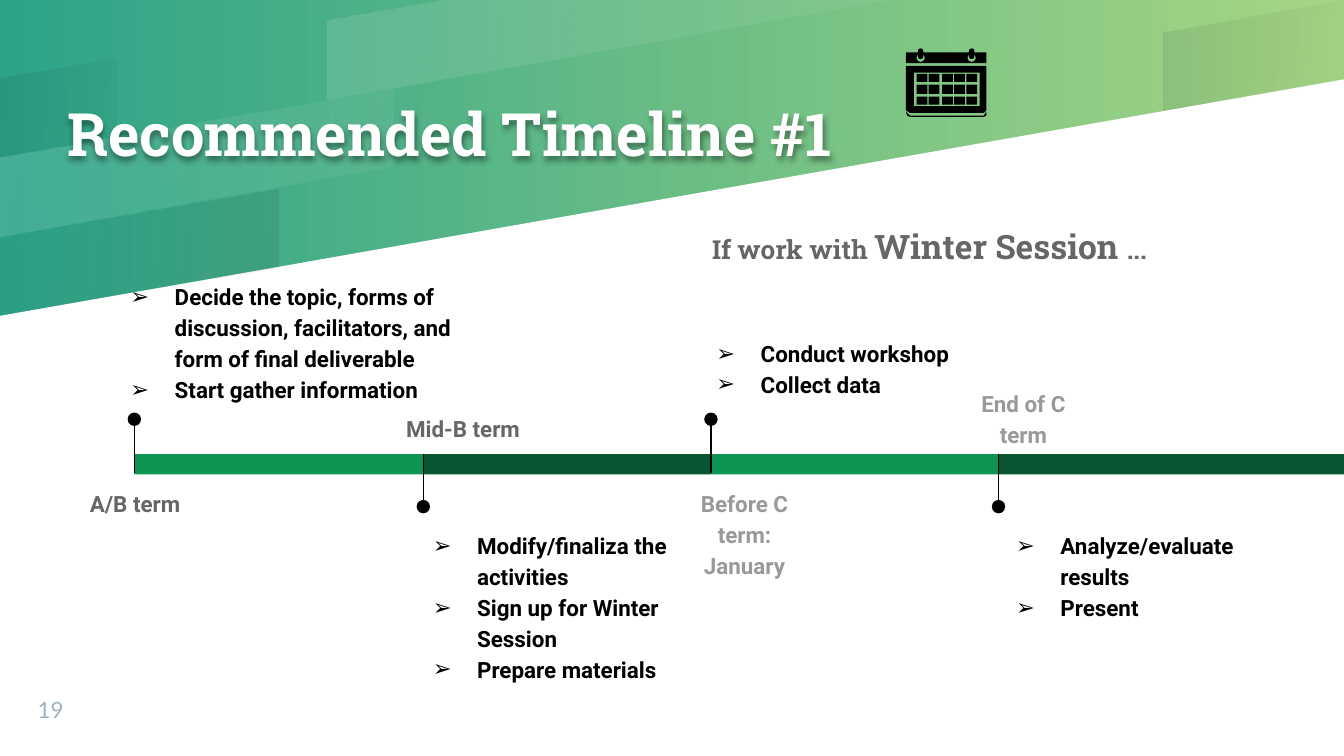
from math import cos, pi, sin

from lxml import etree
from pptx import Presentation
from pptx.dml.color import RGBColor
from pptx.enum.shapes import MSO_CONNECTOR, MSO_SHAPE
from pptx.enum.text import MSO_ANCHOR, MSO_AUTO_SIZE, PP_ALIGN
from pptx.oxml.ns import qn
from pptx.util import Inches, Pt

RECTANGLE, OVAL = MSO_SHAPE.RECTANGLE, MSO_SHAPE.OVAL
ROUNDED = MSO_SHAPE.ROUNDED_RECTANGLE
STRAIGHT = MSO_CONNECTOR.STRAIGHT
TOP, MIDDLE, BOTTOM = MSO_ANCHOR.TOP, MSO_ANCHOR.MIDDLE, MSO_ANCHOR.BOTTOM
LEFT, CENTER = PP_ALIGN.LEFT, PP_ALIGN.CENTER
NO_AUTOFIT = MSO_AUTO_SIZE.NONE

WHITE = RGBColor(0xFF, 0xFF, 0xFF)
BLACK = RGBColor(0x00, 0x00, 0x00)
NAVY = RGBColor(0x00, 0x00, 0x1A)
TEAL = RGBColor(0x2C, 0xA3, 0x88)
LIME = RGBColor(0xA6, 0xD6, 0x83)
GREEN = RGBColor(0x0E, 0x94, 0x53)
DARK_GREEN = RGBColor(0x08, 0x56, 0x31)
DARK_GRAY = RGBColor(0x66, 0x66, 0x66)
GRAY = RGBColor(0x99, 0x99, 0x99)
BLUE_GRAY = RGBColor(0x9E, 0xB3, 0xC2)

SLIDE_WIDTH = 10
SLIDE_HEIGHT = SLIDE_WIDTH * 9 / 16
BAR_TOP, BAR_HEIGHT = 3.38, 0.15
DOT_SIZE = 0.1

BANDS = [
    ([(3.32, 0), (2.44, 0.15), (2.44, 0.74), (6.65, 0)], WHITE, (12, 5)),
    ([(0, 0.58), (0, 1.17), (0.87, 1.02), (0.87, 0.43)], NAVY, (8, 2)),
    ([(0, 1.76), (0, 2.35), (2.07, 1.99), (2.07, 1.4)], NAVY, (2, 8)),
    ([(10, 0), (8.66, 0.24), (8.66, 0.82), (10, 0.59)], NAVY, (8, 2)),
    ([(0, 1.17), (0, 1.76), (2.93, 1.24), (2.93, 0.66)], WHITE, (12, 5)),
]

MILESTONES = [
    (1, "A/B term", DARK_GRAY, (0.53, 3.52, 0.95, 0.41), (0.7, 1.98, 3.07, 0.94),
     ["Decide the topic, forms of discussion, facilitators, and form of final deliverable",
      "Start gather information"]),
    (3.15, "Mid-B term", DARK_GRAY, (2.75, 2.96, 1.39, 0.41), (2.95, 3.83, 2.55, 1.03),
     ["Modify/finaliza the activities", "Sign up for Winter Session", "Prepare materials"]),
    (5.29, "Before C term: January", GRAY, (4.94, 3.52, 1.2, 1.19), (5.06, 2.4, 2.6, 0.83),
     ["Conduct workshop", "Collect data"]),
    (7.43, "End of C term", GRAY, (7.02, 2.77, 1.19, 0.41), (7.29, 3.83, 2.46, 1.03),
     ["Analyze/evaluate results", "Present"]),
]


def set_gradient(fill, colors, angle):
    fill.gradient()
    fill.gradient_angle = angle
    for stop, color in zip(fill.gradient_stops, colors):
        stop.color.rgb = color


def finish_shape(shape, color):
    shape.fill.solid()
    shape.fill.fore_color.rgb = color
    shape.line.fill.background()
    shape.shadow.inherit = False


def add_preset(shapes, kind, area, color):
    shape = shapes.add_shape(kind, *map(Inches, area))
    finish_shape(shape, color)
    return shape


def add_outline(shapes, contours, color):
    contours = [[(Inches(x), Inches(y)) for x, y in points] for points in contours]
    first, *others = contours
    builder = shapes.build_freeform(*first[0], scale=1)
    builder.add_line_segments(first[1:], close=True)
    for points in others:
        builder.move_to(*points[0])
        builder.add_line_segments(points[1:], close=True)
    shape = builder.convert_to_shape()
    finish_shape(shape, color)
    return shape


def add_band(shapes, points, color, opacities):
    band = add_outline(shapes, [points], color)
    set_gradient(band.fill, (color, color), 350)
    for stop_color, opacity in zip(band.element.iter(qn("a:srgbClr")), opacities):
        etree.SubElement(stop_color, qn("a:alpha"), val=str(opacity * 1000))


def format_frame(frame, anchor, inset):
    frame.word_wrap = True
    frame.auto_size = NO_AUTOFIT
    frame.vertical_anchor = anchor
    frame.margin_left = frame.margin_right = Inches(inset)
    frame.margin_top = frame.margin_bottom = Inches(inset)


def format_span(span, size, font, color, bold=True):
    span.font.size = Pt(size)
    span.font.name = font
    span.font.bold = bold
    span.font.color.rgb = color


def add_text(shapes, area, spans, font, color, anchor=TOP, inset=0.1, bold=True):
    box = shapes.add_textbox(*map(Inches, area))
    format_frame(box.text_frame, anchor, inset)
    para = box.text_frame.paragraphs[0]
    for text, size in spans:
        span = para.add_run()
        span.text = text
        format_span(span, size, font, color, bold)
    return para


def place_placeholder(holder, area, text, anchor, inset):
    holder.left, holder.top, holder.width, holder.height = map(Inches, area)
    holder.element.getparent().append(holder.element)
    holder.text_frame.text = text
    format_frame(holder.text_frame, anchor, inset)


def fill_title(title):
    place_placeholder(title, (0.5, 0, 6, 1.98), "Recommended Timeline #1", MIDDLE, 0)
    para = title.text_frame.paragraphs[0]
    para.alignment = LEFT
    format_span(para.runs[0], 32, "Roboto Slab", WHITE)
    effects = etree.SubElement(title.element.spPr, qn("a:effectLst"))
    shadow = etree.SubElement(effects, qn("a:outerShdw"),
                              blurRad="38100", dist="19050", dir="5400000")
    shadow_color = etree.SubElement(shadow, qn("a:srgbClr"), val=str(BLACK))
    etree.SubElement(shadow_color, qn("a:alpha"), val="40000")


def fill_list(holder, area, items):
    place_placeholder(holder, area, "\n".join(items), TOP, 0.1)
    for para in holder.text_frame.paragraphs:
        para.alignment = LEFT
        para.line_spacing = 1.15
        para.space_before = para.space_after = Pt(0)
        format_span(para.runs[0], 12, "Roboto", BLACK)
        properties = para._p.get_or_add_pPr()
        properties.set("marL", str(Inches(0.5)))
        properties.set("indent", str(Inches(-0.33)))
        bullet_color = etree.SubElement(properties, qn("a:buClr"))
        etree.SubElement(bullet_color, qn("a:srgbClr"), val=str(BLACK))
        etree.SubElement(properties, qn("a:buFont"), typeface="Roboto")
        etree.SubElement(properties, qn("a:buChar"), char="➢")


def add_marker(shapes, x, above):
    start, end = (3.13, 3.52) if above else (3.77, BAR_TOP)
    stem = shapes.add_connector(STRAIGHT, *map(Inches, (x, start, x, end)))
    stem.line.color.rgb = BLACK
    stem.line.width = Pt(0.75)
    etree.SubElement(stem.element.spPr, qn("a:effectLst"))
    dot_top = 3.07 if above else 3.72
    add_preset(shapes, OVAL, (x - DOT_SIZE / 2, dot_top, DOT_SIZE, DOT_SIZE), BLACK)


def add_timeline(slide, list_holders):
    ends = [milestone[0] for milestone in MILESTONES[1:]] + [SLIDE_WIDTH]
    for index, (milestone, end, holder) in enumerate(zip(MILESTONES, ends, list_holders)):
        x, label, label_color, label_area, list_area, items = milestone
        above = index % 2 == 0
        bar_color = GREEN if above else DARK_GREEN
        add_preset(slide.shapes, RECTANGLE, (x, BAR_TOP, end - x, BAR_HEIGHT), bar_color)
        add_marker(slide.shapes, x, above)
        para = add_text(slide.shapes, label_area, [(label, 12)], "Roboto", label_color)
        para.alignment = CENTER
        para.line_spacing = 1.15
        fill_list(holder, list_area, items)


def rectangle_points(left, top, right, bottom):
    return [(left, top), (left, bottom), (right, bottom), (right, top)]


def circle_points(x, y, radius, count=24):
    angles = [2 * pi * step / count for step in range(count)]
    return [(x + radius * cos(angle), y + radius * sin(angle)) for angle in angles]


def add_calendar(slide):
    shapes = slide.shapes.add_group_shape().shapes
    ring_centers = (6.85, 7.23)
    holes = [circle_points(x, 0.43, 0.03) for x in ring_centers]
    add_outline(shapes, [rectangle_points(6.74, 0.39, 7.34, 0.47)] + holes, BLACK)
    for x in ring_centers:
        ring = add_preset(shapes, ROUNDED, (x - 0.02, 0.36, 0.04, 0.08), BLACK)
        ring.adjustments[0] = 0.5
    page = [(6.74, 0.49), (6.74, 0.82), (6.77, 0.84), (7.32, 0.84), (7.34, 0.82), (7.34, 0.49)]
    add_outline(shapes, [page, rectangle_points(6.8, 0.54, 7.29, 0.79)[::-1]], BLACK)
    base = [(6.74, 0.83), (6.75, 0.86), (6.77, 0.87), (7.32, 0.87),
            (7.34, 0.86), (7.34, 0.83), (7.32, 0.86), (6.77, 0.86)]
    add_outline(shapes, [base], BLACK)
    for left in (6.82, 6.91, 7.01, 7.1, 7.19):
        for top, height in ((0.55, 0.06), (0.63, 0.07), (0.72, 0.06)):
            add_preset(shapes, RECTANGLE, (left, top, 0.08, height), BLACK)


def main():
    deck = Presentation()
    deck.slide_width, deck.slide_height = Inches(SLIDE_WIDTH), Inches(SLIDE_HEIGHT)
    slide = deck.slides.add_slide(deck.slide_layouts[4])
    title, *list_holders = slide.placeholders
    set_gradient(slide.background.fill, (TEAL, LIME), 0)
    page_area = [(0, SLIDE_HEIGHT), (SLIDE_WIDTH, SLIDE_HEIGHT), (SLIDE_WIDTH, 0.59), (0, 2.35)]
    add_outline(slide.shapes, [page_area], WHITE)
    for band in BANDS:
        add_band(slide.shapes, *band)
    fill_title(title)
    add_text(slide.shapes, (0.28, 5.11, 0.53, 0.27), [("19", 12)], "Lato", BLUE_GRAY,
             BOTTOM, 0, False)
    add_timeline(slide, list_holders)
    add_calendar(slide)
    add_text(slide.shapes, (5.2, 1.58, 4.14, 0.56),
             [("If work with ", 14), ("Winter Session ", 18), ("...", 14)],
             "Roboto Slab", DARK_GRAY)
    deck.save("out.pptx")


if __name__ == "__main__":
    main()
